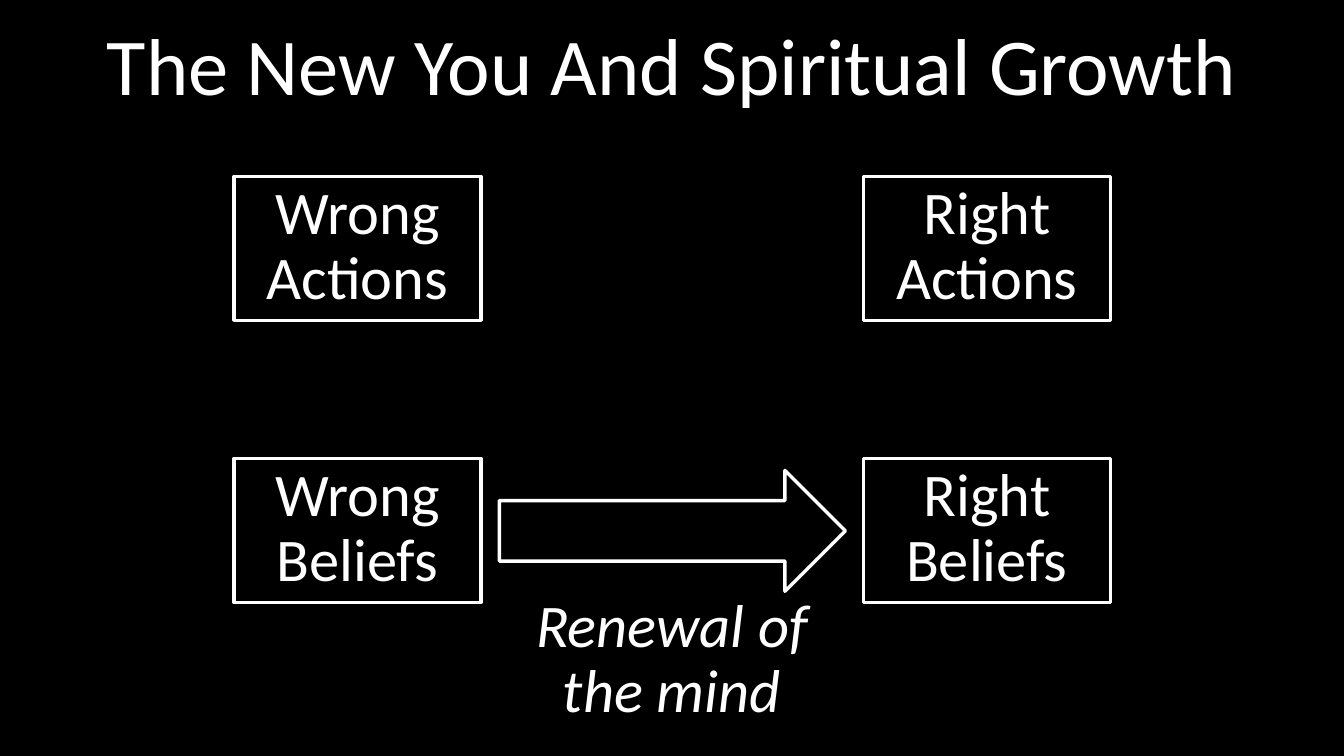
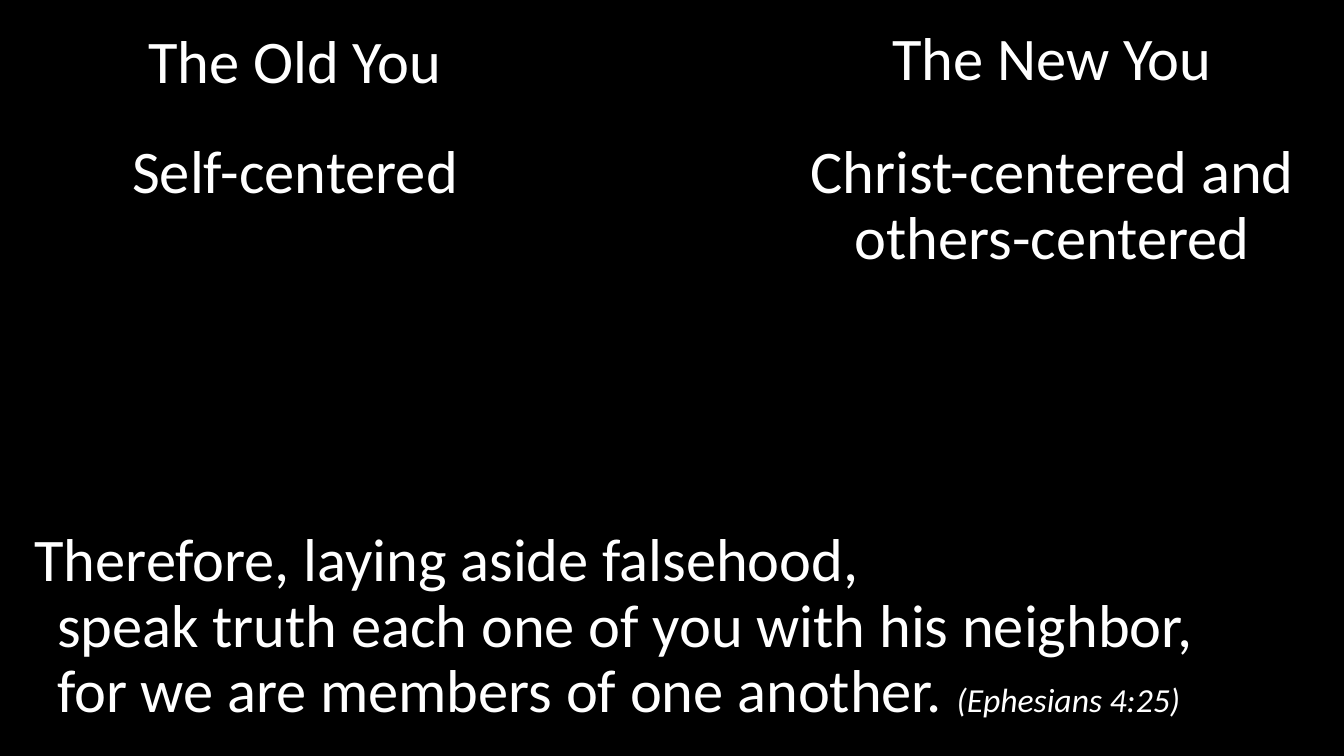
from lxml import etree
from pptx import Presentation
from pptx.dml.color import RGBColor
from pptx.enum import shapes, text
from pptx.oxml.ns import qn
from pptx.util import Pt

BLACK, WHITE = "000000", "FFFFFF"
FONT = "Calibri"
TITLE_SIZE, BODY_SIZE, REF_SIZE = 48, 36, 20
MARGIN, FULL_WIDTH = 13.5, 773
INDENT = 13.5

TITLE = "The New You And Spiritual Growth"
GRID = [["Wrong Actions", "Right Actions"],
        ["Wrong Beliefs", "Right Beliefs"]]
BOX_LEFT, BOX_TOP, BOX_W, BOX_H = 139.3, 105, 147, 85.7
COL_STEP, ROW_STEP = 374.7, 167.9
ARROW = (297.2, 280, 206, 72)
RENEWAL, RENEWAL_AT = "Renewal of the mind", (296.9, 350.6, 206, 85.7)

# text, (left, top, width, height)
CONTRASTS = [
    ("Self-centered", (5.7, 80.8, 340, 46.8)),
    ("Christ-centered and others-centered", (456.3, 80.8, 340, 85.7)),
    ("The Old You", (72.2, 15, 206.5, 46.8)),
    ("The New You", (514, 13.5, 224.5, 46.8)),
]
VERSE = ["Therefore, laying aside falsehood, ",
         "speak truth each one of you with his neighbor, ",
         "for we are members of one another. "]
REFERENCE = "(Ephesians 4:25)"


def rgb(value):
    return RGBColor.from_string(value)


def style_run(r, size=BODY_SIZE, italic=False):
    r.font.name = FONT
    r.font.size = Pt(size)
    r.font.italic = italic
    r.font.color.rgb = rgb(WHITE)


def place(sp, box):
    sp.left, sp.top, sp.width, sp.height = map(Pt, box)


def write(sp, words, align=text.PP_ALIGN.CENTER, italic=False):
    """Fill a shape with one wrapped paragraph and return the paragraph."""
    tf = sp.text_frame
    tf.word_wrap = True
    tf.auto_size = text.MSO_AUTO_SIZE.SHAPE_TO_FIT_TEXT
    tf.vertical_anchor = text.MSO_ANCHOR.TOP
    p = tf.paragraphs[0]
    p.text = words
    p.alignment = align
    p.line_spacing = 0.9
    for r in p.runs:
        style_run(r, italic=italic)
    return p


def add_shape(slide, box, kind=shapes.MSO_SHAPE.ROUNDED_RECTANGLE,
              fill=None, opacity=100, line=None):
    """Add a square-cornered box or another preset, plain unless told otherwise."""
    sp = slide.shapes.add_shape(kind, *map(Pt, box))
    sp.shadow.inherit = False
    if kind == shapes.MSO_SHAPE.ROUNDED_RECTANGLE:
        sp.adjustments[0] = 0
    if fill:
        sp.fill.solid()
        sp.fill.fore_color.rgb = rgb(fill)
        if opacity < 100:
            color = sp._element.spPr.find(qn("a:solidFill"))[0]
            etree.SubElement(color, qn("a:alpha")).set("val", str(opacity * 1000))
    else:
        sp.fill.background()
    if line:
        sp.line.color.rgb = rgb(line)
        sp.line.width = Pt(2)
    else:
        sp.line.fill.background()
    return sp


def add_panel(slide, words, box, **options):
    return write(add_shape(slide, box, fill=BLACK, opacity=50), words, **options)


def growth_slide(prs):
    slide = prs.slides.add_slide(prs.slide_layouts.get_by_name("Title Only"))
    title = slide.shapes.title
    place(title, (MARGIN, 10, FULL_WIDTH, 55))
    tf = title.text_frame
    tf.text = TITLE
    tf.vertical_anchor = text.MSO_ANCHOR.MIDDLE
    tf.paragraphs[0].alignment = text.PP_ALIGN.CENTER
    style_run(tf.paragraphs[0].runs[0], TITLE_SIZE)

    for row, labels in enumerate(GRID):
        for col, label in enumerate(labels):
            box = (BOX_LEFT + col * COL_STEP, BOX_TOP + row * ROW_STEP, BOX_W, BOX_H)
            write(add_shape(slide, box, fill=BLACK, line=WHITE), label)
    add_shape(slide, ARROW, shapes.MSO_SHAPE.RIGHT_ARROW, line=WHITE)
    write(add_shape(slide, RENEWAL_AT), RENEWAL, italic=True)


def contrast_slide(prs):
    slide = prs.slides.add_slide(prs.slide_layouts.get_by_name("Blank"))
    p = add_panel(slide, "\v".join(VERSE), (MARGIN, 311.7, FULL_WIDTH, 125),
                  align=text.PP_ALIGN.LEFT)
    pPr = p._p.get_or_add_pPr()
    pPr.set("marL", str(Pt(INDENT)))
    pPr.set("indent", str(-Pt(INDENT)))
    r = p.add_run()
    r.text = REFERENCE
    style_run(r, REF_SIZE, italic=True)
    for words, box in CONTRASTS:
        add_panel(slide, words, box)


def main():
    prs = Presentation()
    prs.slide_width, prs.slide_height = Pt(800), Pt(450)
    background = prs.slide_master.background.fill
    background.solid()
    background.fore_color.rgb = rgb(BLACK)
    growth_slide(prs)
    contrast_slide(prs)
    prs.save("out.pptx")


if __name__ == "__main__":
    main()
